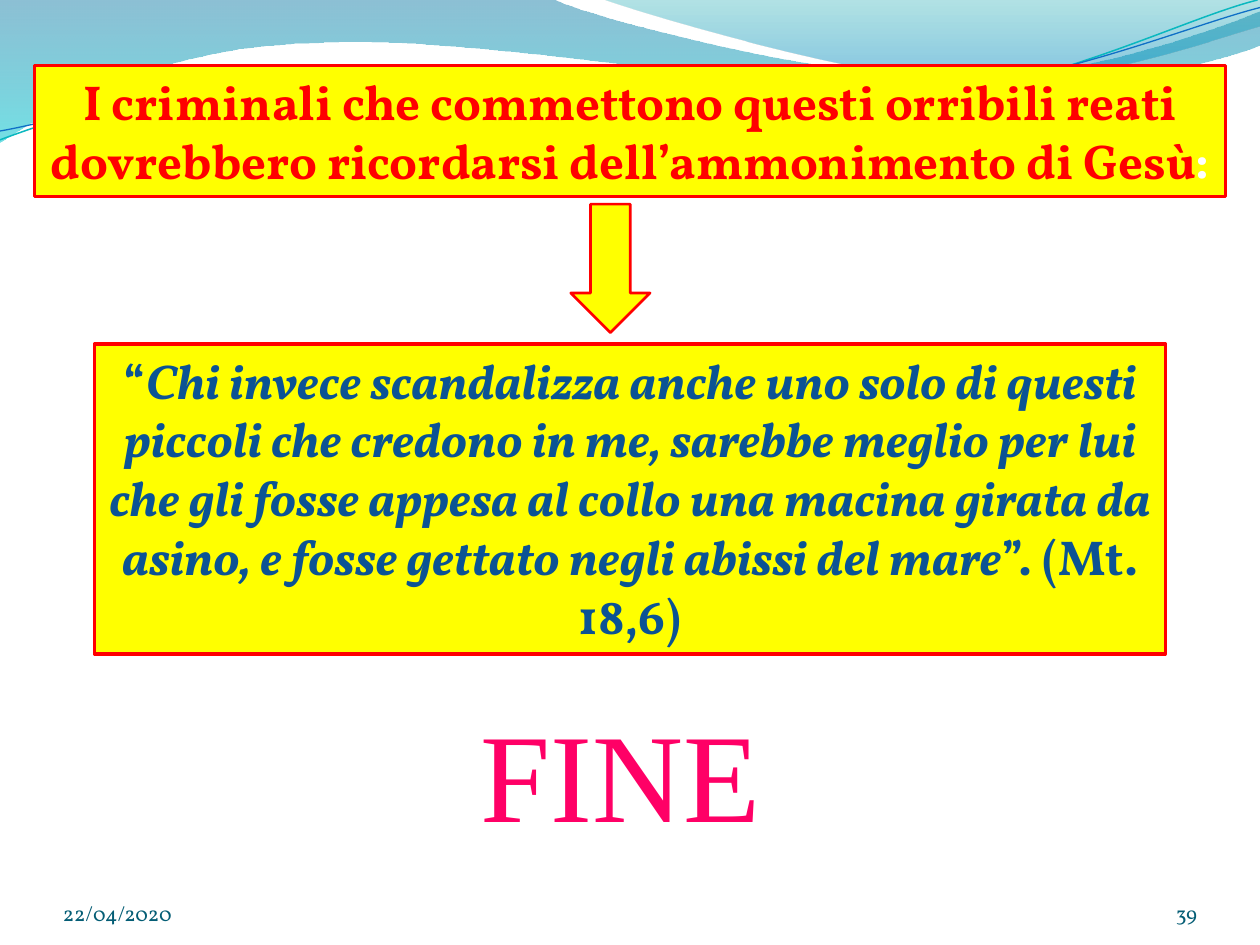
import pptx
import pptx.util
import pptx.dml.color
import pptx.enum.shapes
import pptx.enum.text
import pptx.oxml.ns
from lxml import etree

Inches, Pt, qn = pptx.util.Inches, pptx.util.Pt, pptx.oxml.ns.qn
SHAPE = pptx.enum.shapes.MSO_SHAPE
ALIGN = pptx.enum.text.PP_ALIGN
ANCHOR = pptx.enum.text.MSO_ANCHOR
W, H = 10, 7.5

COLORS = {"yellow": "FFFF00", "red": "FF0000", "white": "FFFFFF", "blue": "0B5394",
          "pink": "FF0066", "footer": "045D75", "teal": "0AB8BF", "navy": "0F6FC6"}

# Content: runs are (text, italic, colour)
WARNING = [("I criminali che commettono questi orribili reati dovrebbero "
            "ricordarsi dell’ammonimento di Gesù", False, "red"), (":", False, "white")]
QUOTE = [("“", False, "blue"),
         ("Chi invece scandalizza anche uno solo di questi piccoli che credono in me, "
          "sarebbe meglio per lui che gli fosse appesa al collo una macina girata da "
          "asino, e fosse gettato negli abissi del mare", True, "blue"),
         ("”. (Mt. 18,6)", False, "blue")]
BOXES = [(QUOTE, 2.73, 8.5, 2.46), (WARNING, 0.52, 9.45, 1.04)]  # runs, top, width, height
FOOTERS = [("22/04/2020", 0.05 * W, 2.33, ALIGN.LEFT),
           ("39", 0.95 * W - 0.83, 0.83, ALIGN.RIGHT)]

# Header waves: a 2-tuple is a straight step, a 6-tuple a Bézier step
BANDS = [
    ([(0, 0), (4.4, 0), (4.76, 0.17, 6.64, 0.63, 7.58, 0.63), (8.53, 0.63, 9.58, 0.26, 10, 0.09),
      (10, 0.36), (9.83, 0.44, 8.7, 0.76, 7.46, 0.75), (6.22, 0.75, 3.82, 0.28, 2.57, 0.34),
      (1.29, 0.36, 0.46, 0.83, 0, 1.13)],
     [(0, "0074A1", 45), (1, "00C6CF", 55)]),
    ([(4.79, 0), (5.09, 0.11, 6.82, 0.62, 7.69, 0.65), (8.56, 0.69, 9.61, 0.32, 10, 0.21), (10, 0)],
     [(0, "00A1A9", 30), (0.8, "008BBF", 45)]),
]
WAVES = [
    ([(0, 1.11), (0.48, 0.93, 1.58, 0.57, 2.77, 0.52), (3.95, 0.47, 5.93, 0.89, 7.13, 0.8),
      (8.33, 0.71, 9.38, 0.15, 9.98, 0)], "teal", 0.85),
    ([(0, 1.04), (0.47, 0.96, 1.64, 0.61, 2.83, 0.56), (4.03, 0.51, 5.97, 0.84, 7.17, 0.75),
      (8.36, 0.67, 9.41, 0.21, 10, 0.06)], "navy", 0.75),
]


def rgb(color):
    return pptx.dml.color.RGBColor.from_string(COLORS.get(color, color))


def outline(sp, color, width):
    sp.line.color.rgb = rgb(color)
    sp.line.width = Pt(width)


def add_curve(s, steps, close):
    """Build straight steps between the end points, then bend the Bézier ones."""
    steps = [tuple(Inches(v) for v in step) for step in steps]
    ends = [step[-2:] for step in steps]
    fb = s.shapes.build_freeform(*ends[0], scale=1.0)
    fb.add_line_segments(ends[1:], close=close)
    sp = fb.convert_to_shape()
    sp.shadow.inherit = False
    origin = [min(axis) for axis in zip(*ends)]
    lines = list(sp.element.spPr.iter(qn("a:lnTo")))
    for ln, step in zip(lines, steps[1:]):
        if len(step) == 6:
            bez = etree.Element(qn("a:cubicBezTo"))
            for i in (0, 2, 4):
                etree.SubElement(bez, qn("a:pt"), x=str(step[i] - origin[0]),
                                 y=str(step[i + 1] - origin[1]))
            ln.getparent().replace(ln, bez)
    return sp


def add_band(s, steps, stops):
    sp = add_curve(s, steps, True)
    sp.line.fill.background()
    sp.fill.gradient()
    sp.fill.gradient_angle = 270
    for stop, (pos, color, _) in zip(sp.fill.gradient_stops, stops):
        stop.position = pos
        stop.color.rgb = rgb(color)
    for clr, (_, _, opacity) in zip(sp.element.spPr.iter(qn("a:srgbClr")), stops):
        etree.SubElement(clr, qn("a:alpha"), val=str(opacity * 1000))


def add_yellow(s, kind, x, y, w, h, line):
    sp = s.shapes.add_shape(kind, Inches(x), Inches(y), Inches(w), Inches(h))
    sp.shadow.inherit = False
    sp.fill.solid()
    sp.fill.fore_color.rgb = rgb("yellow")
    outline(sp, "red", line)
    return sp


def add_text(s, text, x, y, w, h, font, size, color, align):
    tf = s.shapes.add_textbox(Inches(x), Inches(y), Inches(w), Inches(h)).text_frame
    tf.word_wrap = True
    p = tf.paragraphs[0]
    p.text, p.alignment = text, align
    p.font.name, p.font.size, p.font.color.rgb = font, Pt(size), rgb(color)
    return tf


def main():
    prs = pptx.Presentation()
    prs.slide_width, prs.slide_height = Inches(W), Inches(H)
    s = prs.slides.add_slide(prs.slide_layouts[6])

    # Header waves
    for steps, stops in BANDS:
        add_band(s, steps, stops)
    for steps, color, width in WAVES:
        sp = add_curve(s, steps, False)
        sp.fill.background()
        outline(sp, color, width)

    # Closing word
    add_text(s, "FINE", 3.19, 5.48, 3.47, 1.57, "Times New Roman", 72, "pink", ALIGN.CENTER)

    # Date and slide number
    for text, x, w, align in FOOTERS:
        tf = add_text(s, text, x, 6.95, w, 0.4, "Vollkorn", 12, "footer", align)
        tf.margin_left = tf.margin_right = tf.margin_top = tf.margin_bottom = 0
        tf.vertical_anchor = ANCHOR.BOTTOM

    # Warning and quotation, centred on the slide
    for runs, y, w, h in BOXES:
        tf = add_yellow(s, SHAPE.RECTANGLE, (W - w) / 2, y, w, h, 2).text_frame
        tf.word_wrap = True
        tf.vertical_anchor = ANCHOR.TOP
        tf.auto_size = pptx.enum.text.MSO_AUTO_SIZE.SHAPE_TO_FIT_TEXT
        p = tf.paragraphs[0]
        p.alignment = ALIGN.CENTER
        p.font.name, p.font.size, p.font.bold = "Vollkorn", Pt(28), True
        for text, italic, color in runs:
            r = p.add_run()
            r.text, r.font.italic, r.font.color.rgb = text, italic, rgb(color)

    # Arrow from the warning to the quotation
    add_yellow(s, SHAPE.DOWN_ARROW, 4.53, 1.62, 0.63, 1.02, 1.5)

    prs.save("out.pptx")


if __name__ == "__main__":
    main()
